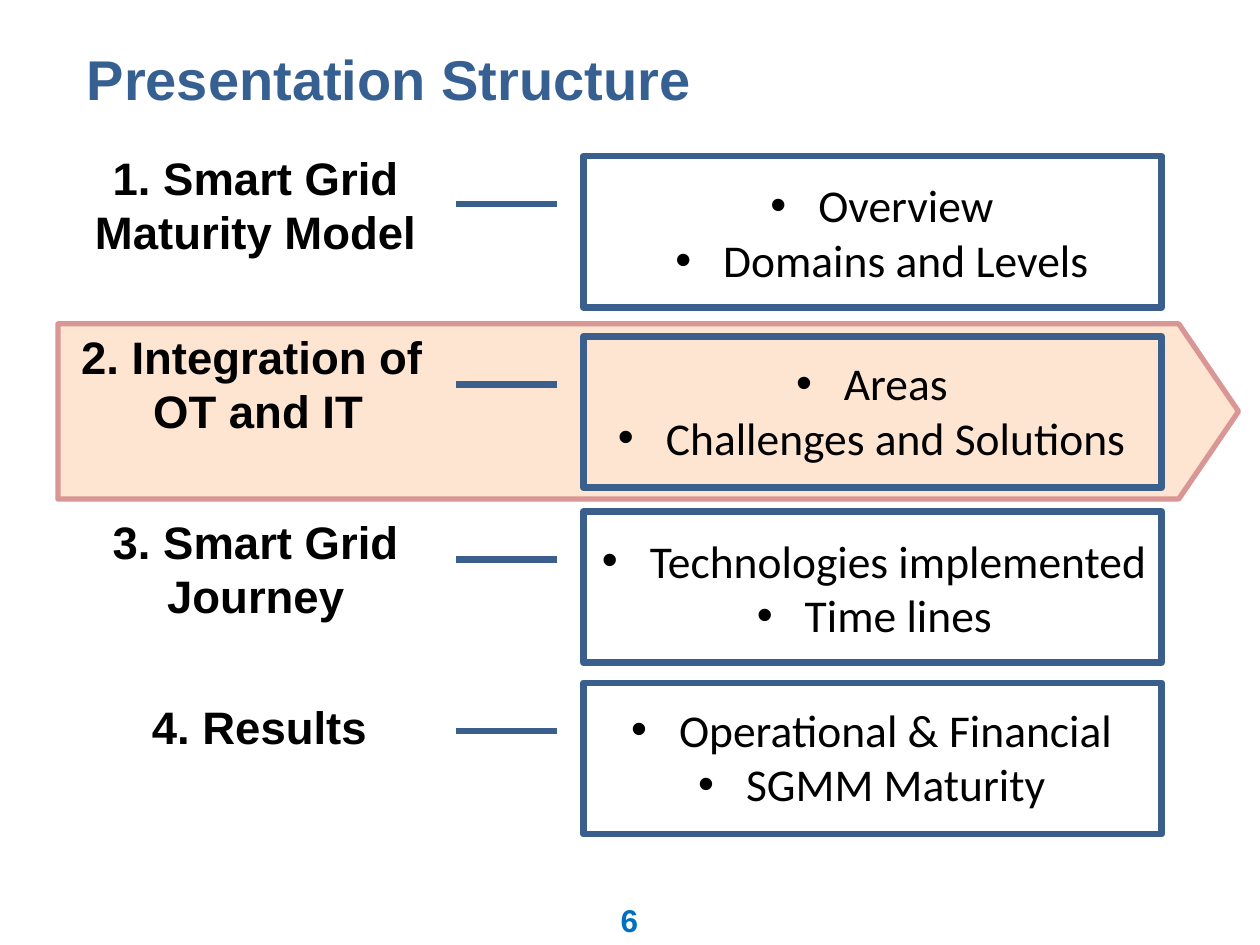
import pptx
import pptx.dml.color
import pptx.enum.shapes
import pptx.enum.text
import pptx.oxml
import pptx.oxml.ns
import pptx.util
from lxml import etree

COLORS = {
    "title": "376092", "number": "0070C0", "text": "000000",
    "frame": "3A5F8C", "arrow": "FAC090", "arrow_line": "D99694",
}
WIDTH, HEIGHT = pptx.util.Inches(10), pptx.util.Inches(7.5)
COL, ROW = WIDTH / 100, HEIGHT / 75

TITLE = {"name": "Arial", "size": pptx.util.Pt(32), "bold": True}
NUMBER = {"name": "Arial", "size": pptx.util.Pt(18), "bold": True}
HEADING = {"name": "Arial", "size": pptx.util.Pt(26), "bold": True}
DETAIL = {"name": "Calibri", "size": pptx.util.Pt(26), "bold": False}

FRAME_LEFT, FRAME_WIDTH, FRAME_HEIGHT = 46.3, 45.9, 12
LEADER = (0.317, -0.045, 0.317, -0.221)

# frame top, heading left and top, heading lines, details left, top and width, details
SECTIONS = [
    (12.4, (1.8, 11.4), ["1. Smart Grid Maturity Model"],
     (47.4, 13.6, 44), ["Overview", "Domains and Levels"]),
    (26.7, (2, 25.6), ["2. Integration of ", "OT and IT"],
     (45.2, 27.7, 46.8), ["Areas", "Challenges and Solutions"]),
    (40.6, (1.8, 40.3), ["3. Smart Grid Journey"],
     (45.4, 41.8, 46.8), ["Technologies implemented", "Time lines"]),
    (54.2, (2.1, 55), ["4. Results"],
     (45.2, 55.2, 46.8), ["Operational & Financial", "SGMM Maturity"]),
]


def rgb(key):
    return pptx.dml.color.RGBColor.from_string(COLORS[key])


def cells(left, top, width, height):
    """Turn columns and rows of the grid into lengths."""
    return [round(n) for n in (left * COL, top * ROW, width * COL, height * ROW)]


def add_bullet(p):
    pPr = p._p.get_or_add_pPr()
    pPr.set("marL", str(pptx.util.Inches(0.5)))
    pPr.set("indent", str(pptx.util.Inches(-0.38)))
    for tag, key, value in (("a:buFont", "typeface", "Arial"), ("a:buChar", "char", "•")):
        etree.SubElement(pPr, pptx.oxml.ns.qn(tag)).set(key, value)


def add_text(slide, box, lines, style, color="text", centered=True, bullets=False):
    tf = slide.shapes.add_textbox(*cells(*box)).text_frame
    tf.word_wrap = True
    for i, line in enumerate(lines):
        p = tf.paragraphs[0] if i == 0 else tf.add_paragraph()
        if centered:
            p.alignment = pptx.enum.text.PP_ALIGN.CENTER
        if bullets:
            add_bullet(p)
        r = p.add_run()
        r.text = line
        for name, value in style.items():
            setattr(r.font, name, value)
        r.font.color.rgb = rgb(color)


def add_outlined(slide, kind, box, adjustments, line, weight):
    sp = slide.shapes.add_shape(kind, *cells(*box))
    sp.shadow.inherit = False
    for i, value in enumerate(adjustments):
        sp.adjustments[i] = value
    sp.fill.background()
    sp.line.color.rgb = rgb(line)
    sp.line.width = pptx.util.Pt(weight)
    return sp


def add_highlight(slide):
    sp = add_outlined(slide, pptx.enum.shapes.MSO_SHAPE.PENTAGON,
                      (4.6, 25.7, 93.7, 13.9), [0.341], "arrow_line", 3)
    sp.fill.solid()
    sp.fill.fore_color.rgb = rgb("arrow")
    clr = sp._element.spPr.find(".//" + pptx.oxml.ns.qn("a:srgbClr"))
    etree.SubElement(clr, pptx.oxml.ns.qn("a:alpha")).set("val", "40000")


def add_section(slide, top, heading_at, heading, details_at, details):
    """Add a heading and its callout frame, whose leader points at the heading."""
    add_text(slide, (*heading_at, 37, 10), heading, HEADING)
    add_outlined(slide, pptx.enum.shapes.MSO_SHAPE.LINE_CALLOUT_1,
                 (FRAME_LEFT, top, FRAME_WIDTH, FRAME_HEIGHT), LEADER, "frame", 3.75)
    add_text(slide, (*details_at, 10), details, DETAIL, bullets=True)


def main():
    prs = pptx.Presentation()
    prs.slide_width, prs.slide_height = WIDTH, HEIGHT
    slide = prs.slides.add_slide(prs.slide_layouts[6])
    add_text(slide, (5.9, 3, 90, 7.8), ["Presentation Structure"], TITLE, "title", centered=False)
    add_text(slide, (38.3, 71, 23.3, 4), ["6"], NUMBER, "number")
    add_highlight(slide)
    for section in SECTIONS:
        add_section(slide, *section)
    prs.save("out.pptx")


if __name__ == "__main__":
    main()
